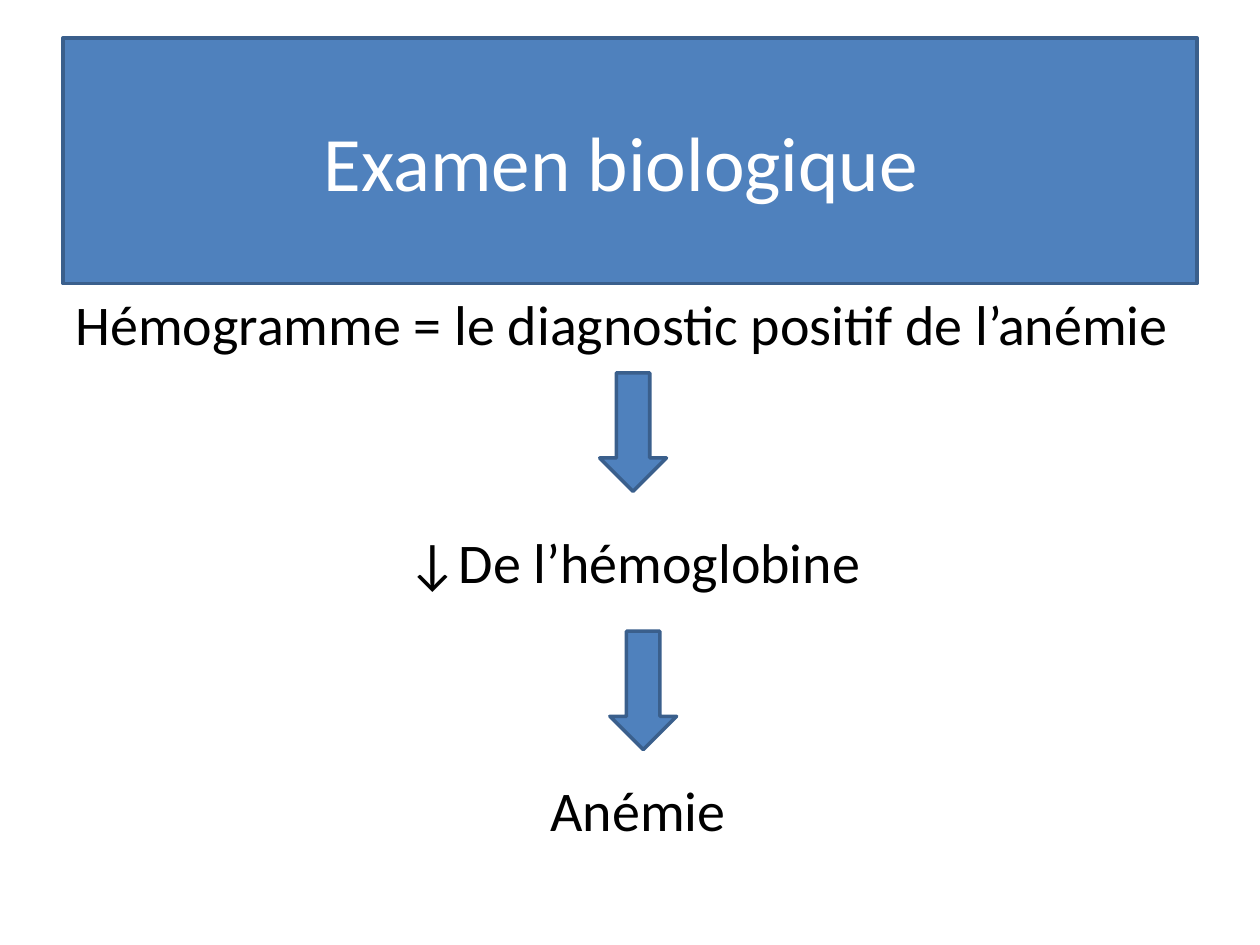
from pptx import Presentation
from pptx.dml.color import RGBColor
from pptx.enum.shapes import MSO_SHAPE
from pptx.enum.text import MSO_ANCHOR, PP_ALIGN
from pptx.util import Inches, Pt


def color(value):
    """Turn a hex string into a colour."""
    return RGBColor.from_string(value)


def write(shape, text, size=32, ink="000000", align=PP_ALIGN.CENTER,
          anchor=MSO_ANCHOR.TOP, font="Calibri"):
    """Put formatted text in a shape."""
    frame = shape.text_frame
    frame.word_wrap = True
    frame.vertical_anchor = anchor
    paragraph = frame.paragraphs[0]
    paragraph.alignment = align
    run = paragraph.add_run()
    run.text = text
    run.font.name = font
    run.font.size = Pt(size)
    run.font.color.rgb = color(ink)


class SlideBuilder:
    """Hold the style and the current slide."""

    fill = "4F81BD"
    outline = "3A5F8C"
    outline_width = 2

    def __init__(self, slide):
        """Keep the slide to draw on."""
        self.slide = slide

    def block(self, kind, left, top, width, height):
        """Add a filled and outlined preset shape."""
        shape = self.slide.shapes.add_shape(
            kind, Inches(left), Inches(top), Inches(width), Inches(height))
        shape.shadow.inherit = False
        shape.fill.solid()
        shape.fill.fore_color.rgb = color(self.fill)
        shape.line.color.rgb = color(self.outline)
        shape.line.width = Pt(self.outline_width)
        return shape

    def title(self, text, left, top, width, height):
        """Add the title banner."""
        banner = self.block(MSO_SHAPE.RECTANGLE, left, top, width, height)
        write(banner, text, size=44, ink="FFFFFF", anchor=MSO_ANCHOR.MIDDLE)

    def arrow(self, left, top):
        """Add a down arrow between two steps."""
        self.block(MSO_SHAPE.DOWN_ARROW, left, top, 0.53, 0.94)

    def text(self, text, left, top, width, height, **style):
        """Add a text box."""
        box = self.slide.shapes.add_textbox(
            Inches(left), Inches(top), Inches(width), Inches(height))
        write(box, text, **style)


def main():
    """Build and save the presentation."""
    presentation = Presentation()
    presentation.slide_width = Inches(10)
    presentation.slide_height = Inches(7.5)
    builder = SlideBuilder(
        presentation.slides.add_slide(presentation.slide_layouts[6]))

    builder.text("Hémogramme = le diagnostic positif de l’anémie",
                 0.5, 2.25, 9, 4.45, align=PP_ALIGN.LEFT)
    builder.title("Examen biologique ", 0.5, 0.3, 9, 1.95)
    builder.arrow(4.76, 2.96)
    builder.text("↓De l’hémoglobine", 2.87, 4.14, 4.33, 0.94)
    builder.arrow(4.84, 5.01)
    builder.text("Anémie ", 1.69, 6.11, 6.85, 0.64)

    presentation.save("out.pptx")


if __name__ == "__main__":
    main()
